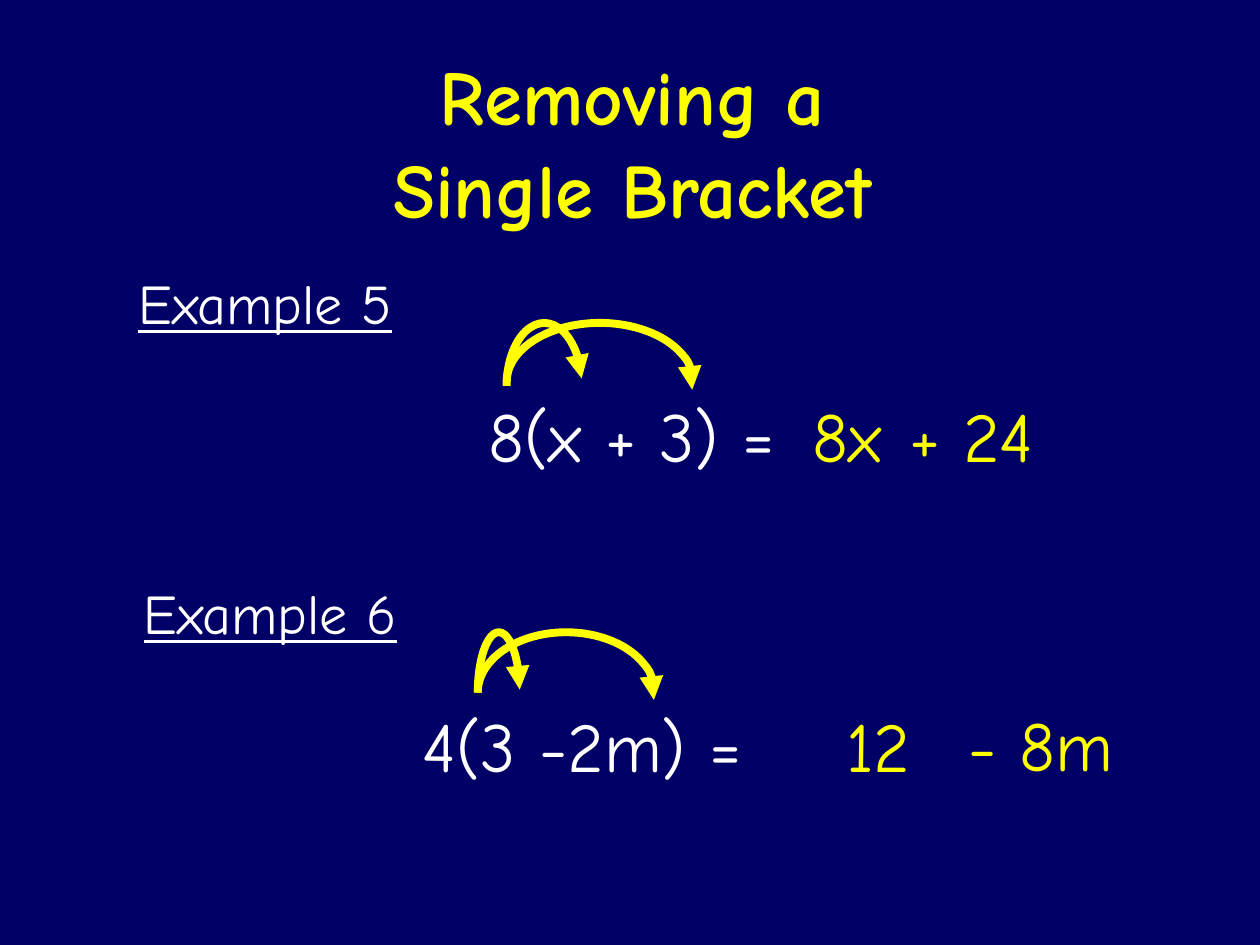
"""Build a slide on removing a single bracket, with two worked examples."""
from lxml.etree import SubElement
from pptx import Presentation
from pptx.dml.color import RGBColor
from pptx.enum.shapes import MSO_SHAPE
from pptx.enum.text import MSO_ANCHOR, MSO_AUTO_SIZE, PP_ALIGN
from pptx.oxml.ns import qn
from pptx.util import Pt

NAVY = RGBColor(0x00, 0x00, 0x66)
WHITE = RGBColor(0xFF, 0xFF, 0xFF)
YELLOW = RGBColor(0xFF, 0xFF, 0x00)
FONT = "Comic Neue"

TITLE = ["Removing a", "Single Bracket"]
EXAMPLES = [
    {
        "heading": ("Example 5", 72, 150, 168.5),
        "question": ("8(x + 3) =", 272, 221, 194),
        "answer": [("8x", 457, 221, 63.5), ("+ 24", 512.5, 220.5, 95)],
        "arc_start": (289.5, 184.5),
        "arcs": [(43, 72, 47.21), (106.5, 67.5, 56.86)],
    },
    {
        "heading": ("Example 6", 75, 327, 168.5),
        "question": ("4(3 -2m) =", 234.5, 398, 211),
        "answer": [("12", 476.5, 398, 57.5), (" - 8m", 533, 397.5, 111.5)],
        "arc_start": (273, 361.25),
        "arcs": [(24, 69, 49.07), (101, 69, 56.86)],
    },
]


def style(p, size, color):
    p.font.name = FONT
    p.font.size = Pt(size)
    p.font.color.rgb = color


def add_text(s, item, size, color, underline=None):
    text, left, top, width = item
    height = size * 1.2 + 7.5
    sp = s.shapes.add_textbox(Pt(left), Pt(top), Pt(width), Pt(height))
    tf = sp.text_frame
    tf.word_wrap = False
    tf.auto_size = MSO_AUTO_SIZE.SHAPE_TO_FIT_TEXT
    p = tf.paragraphs[0]
    p.text = text
    style(p, size, color)
    p.font.underline = underline


def add_arc(s, start, span, rise, end):
    """Draw an arrow arching over span by rise; the arc is turned a quarter left."""
    left = start[0] + (span - rise) / 2
    top = start[1] + (rise - span) / 2
    sp = s.shapes.add_shape(MSO_SHAPE.ARC, Pt(left), Pt(top), Pt(rise), Pt(span))
    sp.rotation = 270
    sp.adjustments[0] = 162
    sp.adjustments[1] = end
    sp.shadow.inherit = False
    sp.fill.background()
    sp.line.color.rgb = YELLOW
    sp.line.width = Pt(4.5)
    SubElement(sp.line._get_or_add_ln(), qn("a:tailEnd"), type="triangle")


def add_title(s):
    sp = s.shapes.title
    sp.left, sp.top, sp.width, sp.height = Pt(145.5), Pt(24), Pt(432), Pt(113)
    tf = sp.text_frame
    tf.text = "\n".join(TITLE)
    tf.vertical_anchor = MSO_ANCHOR.BOTTOM
    tf.auto_size = MSO_AUTO_SIZE.NONE
    for p in tf.paragraphs:
        style(p, 44, YELLOW)
        p.font.bold = True
        p.alignment = PP_ALIGN.CENTER
        p.space_before = Pt(0)


def main():
    prs = Presentation()
    prs.slide_width, prs.slide_height = Pt(720), Pt(540)
    s = prs.slides.add_slide(prs.slide_layouts[5])
    s.background.fill.solid()
    s.background.fill.fore_color.rgb = NAVY
    add_title(s)
    for example in EXAMPLES:
        add_text(s, example["heading"], 32, WHITE, underline=True)
        add_text(s, example["question"], 40, WHITE)
        for term in example["answer"]:
            add_text(s, term, 40, YELLOW)
        for span, rise, end in example["arcs"]:
            add_arc(s, example["arc_start"], span, rise, end)
    prs.save("out.pptx")


if __name__ == "__main__":
    main()
